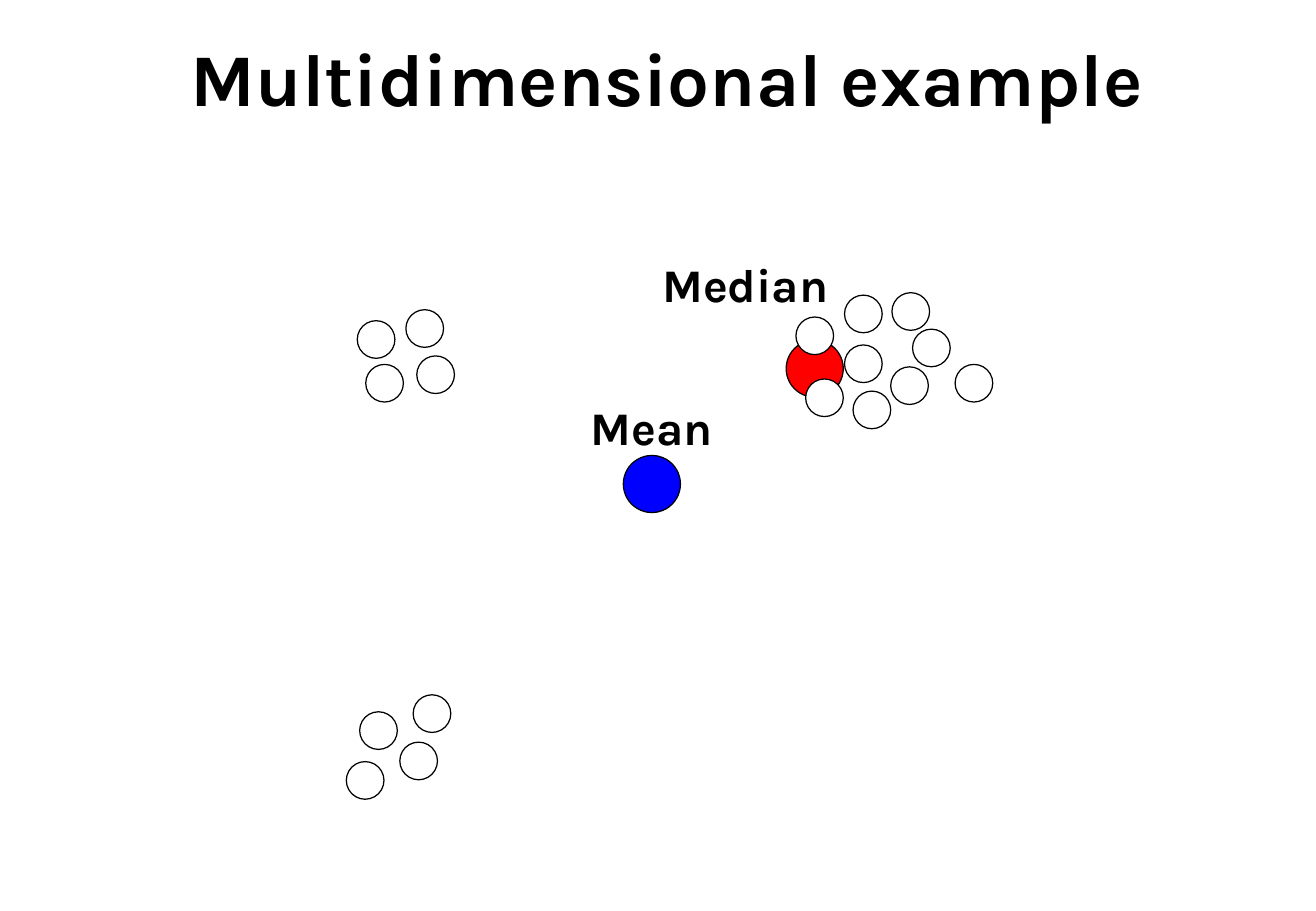
from dataclasses import dataclass

from pptx import Presentation
from pptx import util as u
from pptx.dml.color import RGBColor
from pptx.enum import shapes, text


@dataclass
class Theme:
    font: str = "Karla"
    ink: str = "000000"
    point: str = "FFFFFF"
    median: str = "FF0000"
    mean: str = "0000FF"
    title: float = 44
    label: float = 27.7
    line: float = 0.75


theme = Theme()
deck = Presentation()
deck.slide_width, deck.slide_height = u.Inches(10.83), u.Inches(7.5)
slide = deck.slides.add_slide(deck.slide_layouts[6])


def add_dot(left, top, size, fill):
    dot = slide.shapes.add_shape(
        shapes.MSO_SHAPE.OVAL, *map(u.Inches, (left, top, size, size)))
    dot.shadow.inherit = False
    dot.fill.solid()
    dot.fill.fore_color.rgb = RGBColor.from_string(fill)
    dot.line.color.rgb = RGBColor.from_string(theme.ink)
    dot.line.width = u.Pt(theme.line)


def add_text(words, left, top, width, height, size, align):
    box = slide.shapes.add_textbox(*map(u.Inches, (left, top, width, height)))
    frame = box.text_frame
    frame.word_wrap = True
    frame.vertical_anchor = text.MSO_ANCHOR.MIDDLE
    frame.margin_left = frame.margin_right = 0
    frame.margin_top = frame.margin_bottom = 0
    para = frame.paragraphs[0]
    para.alignment = align
    run = para.add_run()
    run.text = words
    run.font.name = theme.font
    run.font.size = u.Pt(size)
    run.font.bold = True
    run.font.color.rgb = RGBColor.from_string(theme.ink)


# Title
add_text("Multidimensional example", 1.2, 0.21, 8.58, 0.84,
         theme.title, text.PP_ALIGN.CENTER)

# Mean and median, behind the data points
center = 0.47
add_dot(6.47, 2.8, center, theme.median)
add_dot(5.13, 3.75, center, theme.mean)
for words, left, top, width in (("Mean", 4.86, 3.28, 1.06),
                                ("Median", 5.45, 2.1, 1.42)):
    add_text(words, left, top, width, 0.47, theme.label, text.PP_ALIGN.LEFT)

# Data points, by cluster
clusters = {
    "right": [(7.33, 3.02), (6.55, 2.61), (7.34, 2.41), (6.95, 2.84),
              (7.86, 3), (7.02, 3.22), (6.95, 2.43), (7.51, 2.71),
              (6.63, 3.12)],
    "upper left": [(2.94, 2.64), (3.34, 2.55), (3.43, 2.93), (3.01, 3)],
    "lower left": [(2.96, 5.86), (2.85, 6.27), (3.29, 6.11), (3.4, 5.72)],
}
for points in clusters.values():
    for left, top in points:
        add_dot(left, top, 0.31, theme.point)

deck.save("out.pptx")
